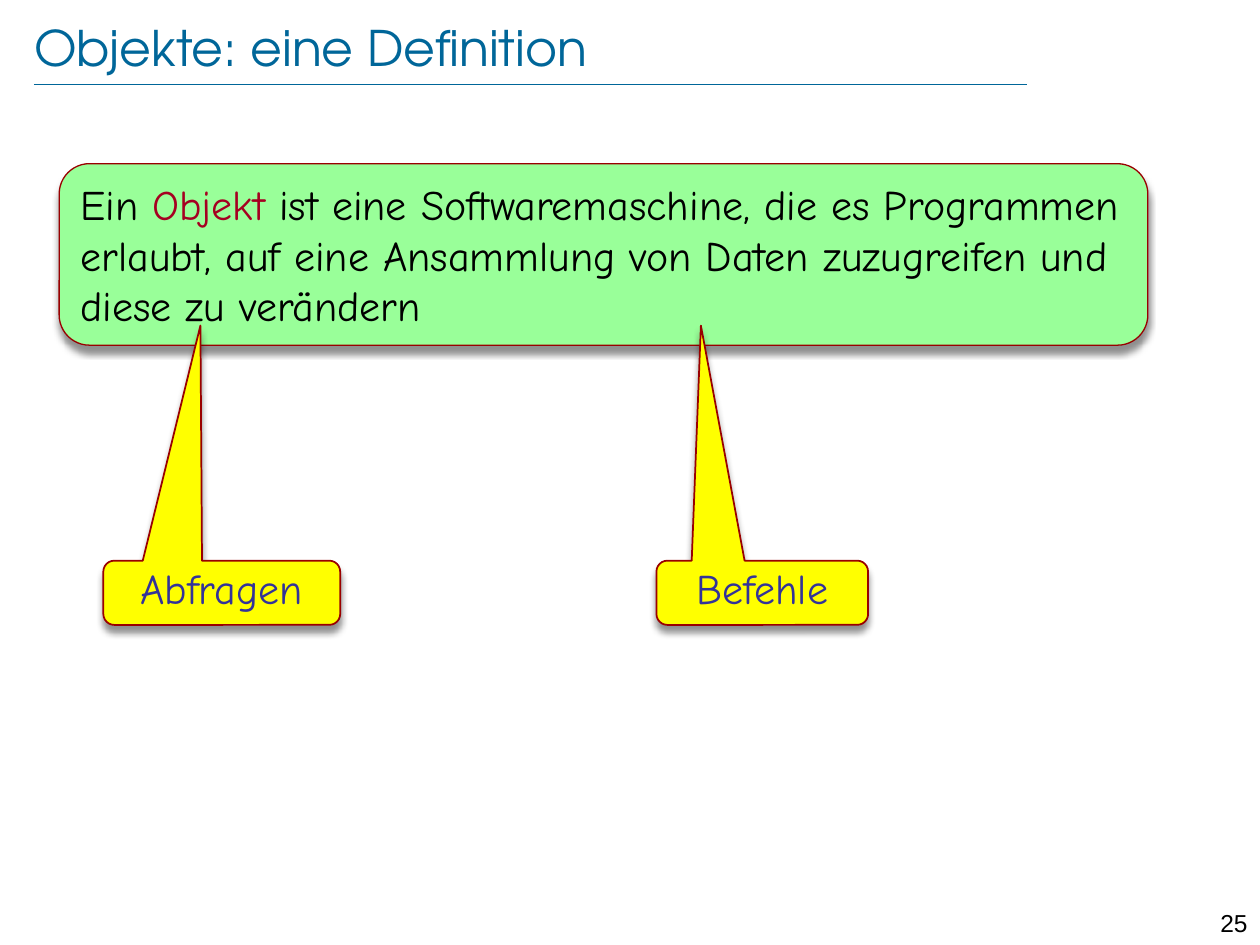
from lxml import etree
from pptx import Presentation
from pptx.dml.color import RGBColor
from pptx.enum.shapes import MSO_CONNECTOR, MSO_SHAPE
from pptx.enum.text import MSO_ANCHOR, PP_ALIGN
from pptx.oxml.ns import qn
from pptx.util import Inches, Pt

STRAIGHT = MSO_CONNECTOR.STRAIGHT
ROUNDED, CALLOUT = MSO_SHAPE.ROUNDED_RECTANGLE, MSO_SHAPE.ROUNDED_RECTANGULAR_CALLOUT
TOP, MIDDLE = MSO_ANCHOR.TOP, MSO_ANCHOR.MIDDLE
LEFT, CENTER, RIGHT = PP_ALIGN.LEFT, PP_ALIGN.CENTER, PP_ALIGN.RIGHT
COLORS = {"title": "006699", "border": "990000", "definition": "99FF99",
          "callout": "FFFF00", "label": "333399", "term": "A50021",
          "text": "000000", "shadow": "000000"}
BODY_FONT = "Comic Neue"

prs = Presentation()
prs.slide_width, prs.slide_height = Inches(10), Inches(7.5)
slide = prs.slides.add_slide(prs.slide_layouts[6])


def area(left, top, width, height):
    """Turn percentages of the slide into a position and size."""
    w, h = prs.slide_width / 100, prs.slide_height / 100
    return int(left * w), int(top * h), int(width * w), int(height * h)


def write(shape, runs, font, size, align=LEFT, anchor=TOP, insets=(0.1, 0.05)):
    frame = shape.text_frame
    frame.word_wrap = True
    frame.vertical_anchor = anchor
    frame.margin_left = frame.margin_right = Inches(insets[0])
    frame.margin_top = frame.margin_bottom = Inches(insets[1])
    paragraph = frame.paragraphs[0]
    paragraph.alignment = align
    for text, color in runs:
        run = paragraph.add_run()
        run.text = text
        run.font.name, run.font.size = font, Pt(size)
        run.font.color.rgb = RGBColor.from_string(COLORS[color])
    return paragraph


# Title and the rule below it
title = slide.shapes.add_textbox(*area(2.7, 1.73, 88.8, 6.4))
write(title, [("Objekte: eine Definition", "title")], "TeX Gyre Adventor", 28,
      anchor=MIDDLE, insets=(0, 0))
x, y, length, _ = area(2.7, 8.93, 78.8, 0)
rule = slide.shapes.add_connector(STRAIGHT, x, y, x + length, y)
rule.line.color.rgb = RGBColor.from_string(COLORS["title"])
rule.line.width = Pt(0.25)
etree.SubElement(rule._element.spPr, qn("a:effectLst"))

# Page number
page_number = slide.shapes.add_textbox(*area(94.5, 95.47, 5.5, 3.2))
write(page_number, [("25", "text")], "Arial", 14, align=RIGHT)

# Definition
definition = slide.shapes.add_shape(ROUNDED, *area(4.7, 17.33, 86.4, 19.2))
write(definition, [
    ("Ein ", "text"), ("Objekt", "term"),
    (" ist eine Softwaremaschine, die es Programmen erlaubt, auf eine Ansammlung "
     "von Daten zuzugreifen und diese zu verändern", "text")], BODY_FONT, 24)
boxes = [(definition, "definition", 0.75)]

# Callouts pointing up into the definition
for label, left, width, tip in [("Abfragen", 8.2, 18.8, -0.09),
                                ("Befehle", 52.1, 16.8, -0.29)]:
    callout = slide.shapes.add_shape(CALLOUT, *area(left, 59.33, width, 6.8))
    callout.adjustments[0], callout.adjustments[1] = tip, -4.16
    callout.adjustments[2] = 0.17
    paragraph = write(callout, [(label, "label")], BODY_FONT, 24, CENTER, MIDDLE, (0, 0.05))
    paragraph.line_spacing = 0.8
    boxes.append((callout, "callout", 1))

# Fill, border and soft shadow of the boxes
for box, fill, border in boxes:
    box.fill.solid()
    box.fill.fore_color.rgb = RGBColor.from_string(COLORS[fill])
    box.line.color.rgb = RGBColor.from_string(COLORS["border"])
    box.line.width = Pt(border)
    box.shadow.inherit = False
    effects = box._element.spPr.find(qn("a:effectLst"))
    shadow = etree.SubElement(effects, qn("a:outerShdw"), blurRad=str(Pt(4)),
                              dist=str(Pt(4)), dir="5400000", rotWithShape="0")
    tint = etree.SubElement(shadow, qn("a:srgbClr"), val=COLORS["shadow"])
    etree.SubElement(tint, qn("a:alpha"), val="43000")

prs.save("out.pptx")
